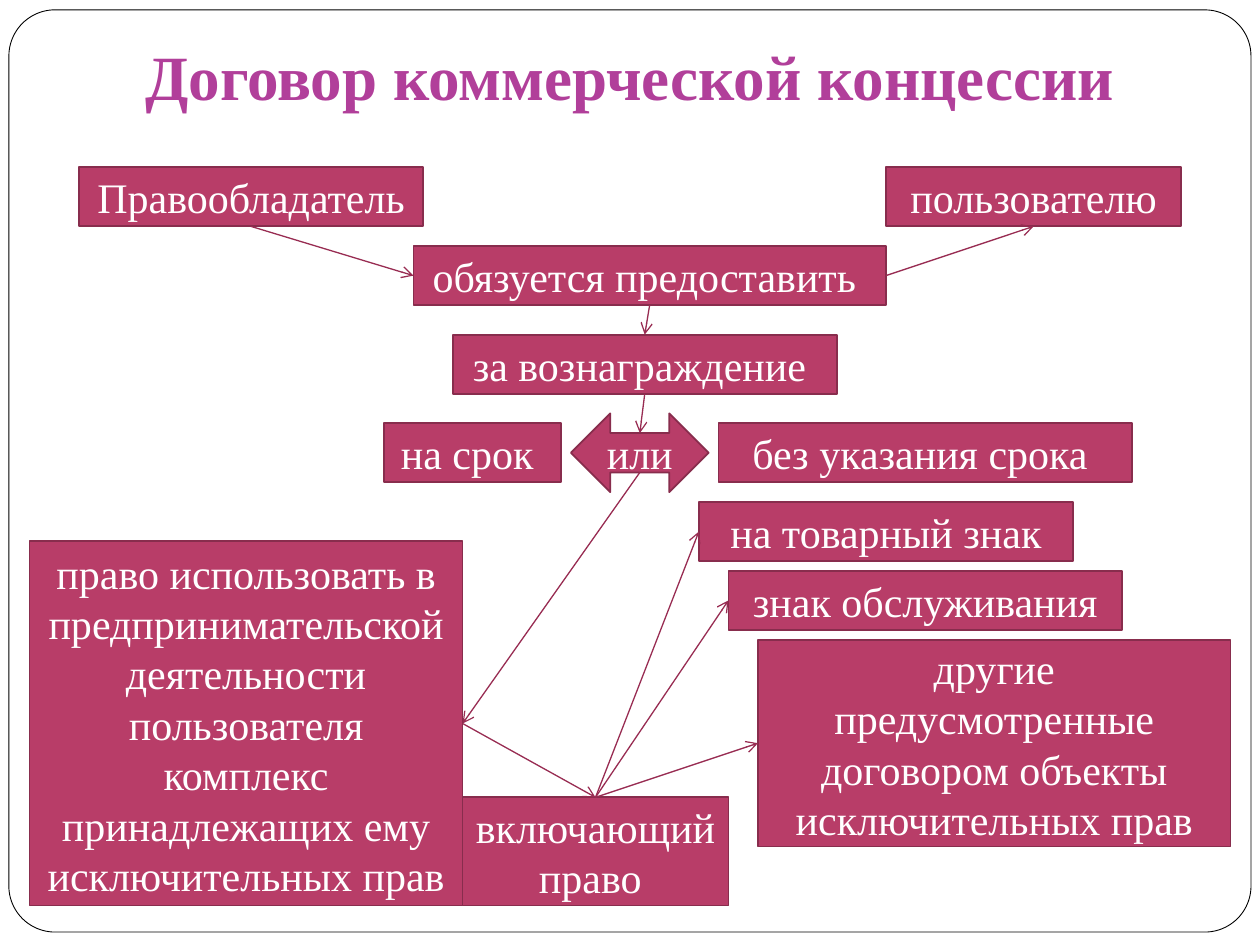
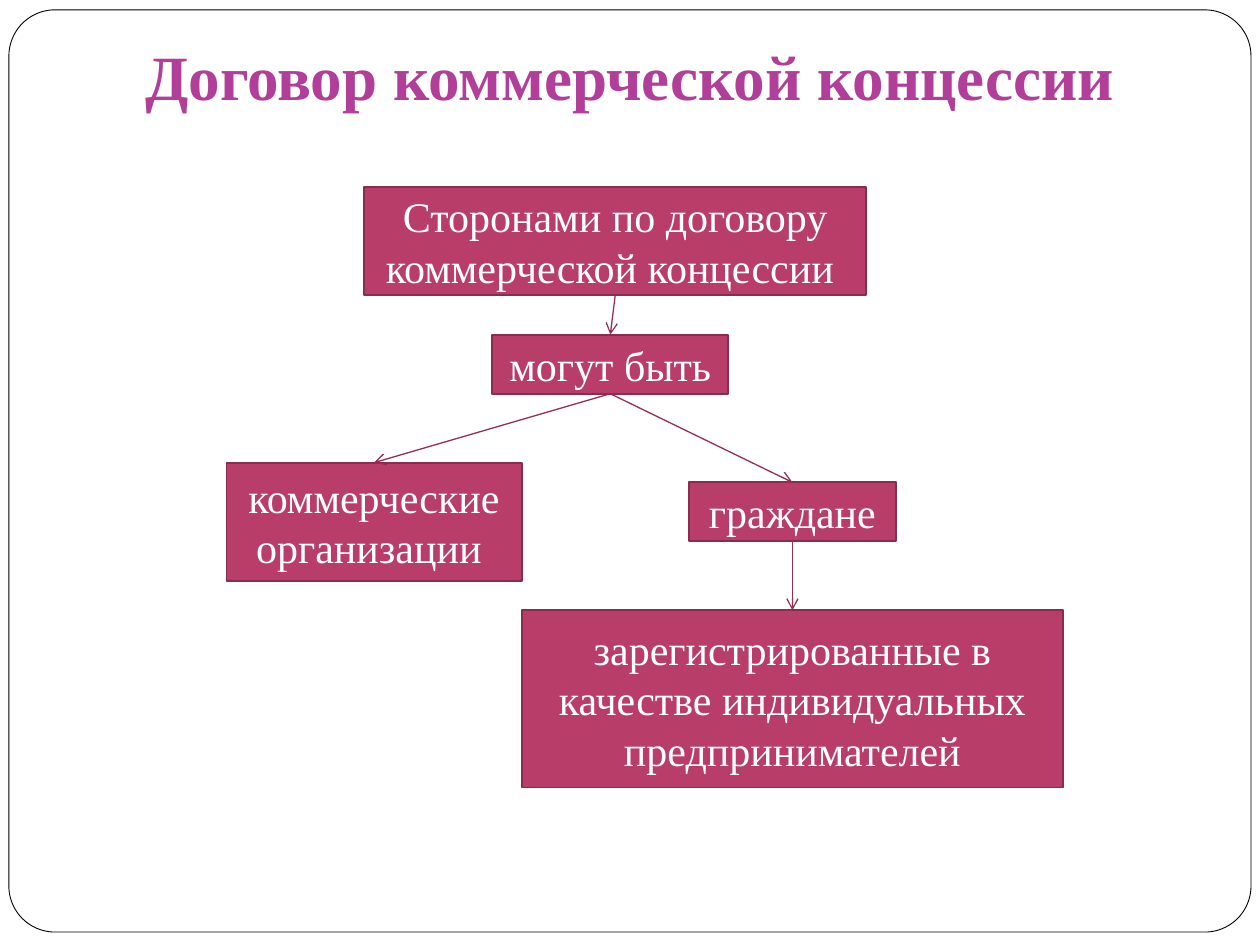
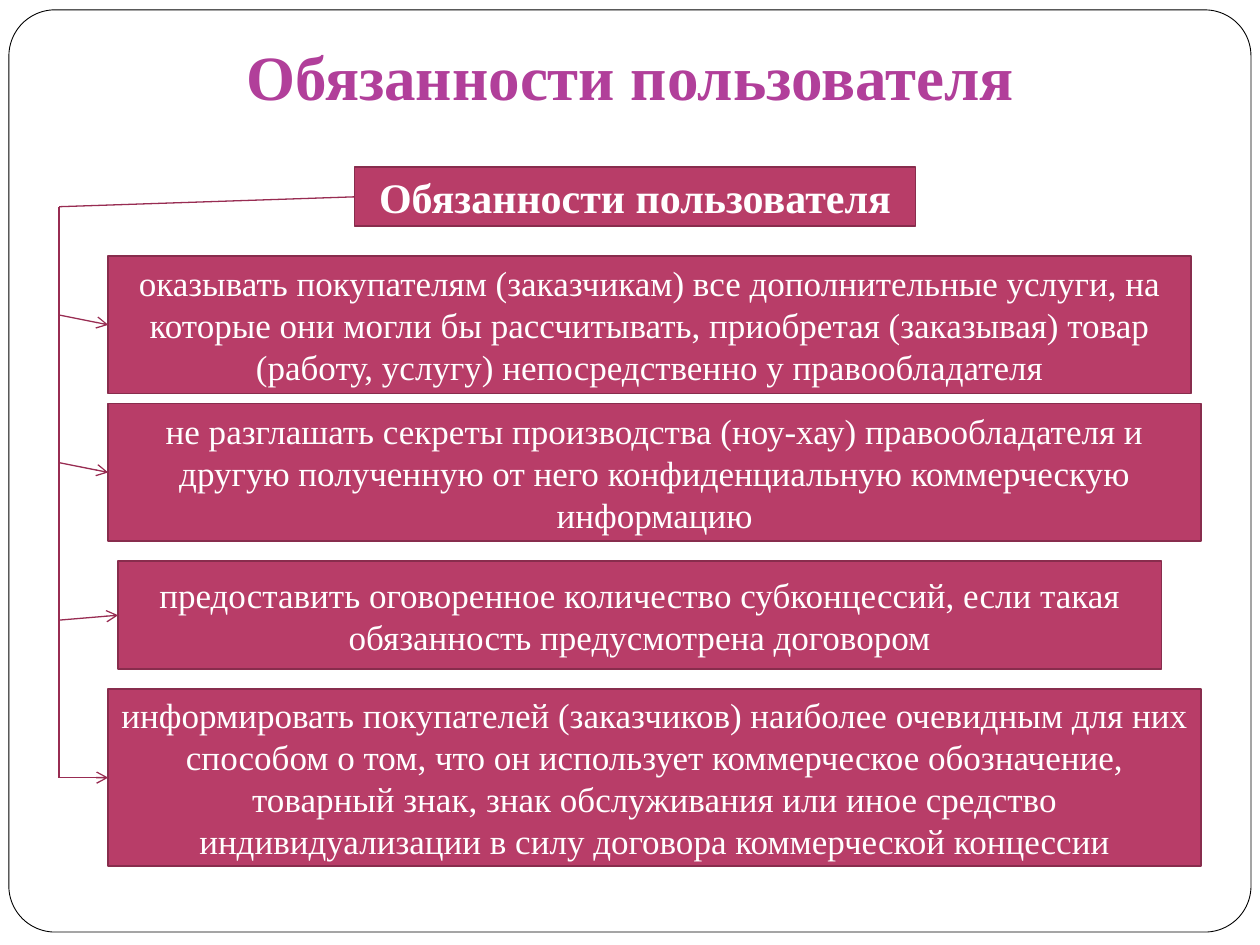
"""Build three slides on the commercial concession agreement."""
from lxml.etree import SubElement
from pptx import Presentation
from pptx.dml.color import RGBColor
from pptx.enum.shapes import MSO_CONNECTOR as Connector, MSO_SHAPE as Preset
from pptx.enum.text import MSO_ANCHOR as Anchor, MSO_AUTO_SIZE as AutoSize, PP_ALIGN as Align
from pptx.oxml.ns import qn
from pptx.util import Cm, Pt

COLORS = {
    "paper": "FFFFFF", "frame": "000000", "title": "B13F9A",
    "box": "B83D68", "border": "882D4D", "arrow": "982C52", "text": "FFFFFF",
}
FONT = "Times New Roman"
WIDTH, HEIGHT = 25.4, 19.05
COLUMNS = 128
TOP, LEFT, BOTTOM, RIGHT = range(4)
STYLES = {"label": (24, False), "heading": (24, True), "duty": (20, False)}
TRUNK = 6

SLIDES = [
    {
        "title": "Договор коммерческой концессии",
        "boxes": {
            "owner": ("Правообладатель", (8, 17, 35, 6), "label"),
            "user": ("пользователю", (90, 17, 30, 6), "label"),
            "provide": ("обязуется предоставить ", (42, 25, 48, 6), "label"),
            "fee": ("за вознаграждение ", (46, 34, 39, 6), "label"),
            "term": ("на срок ", (39, 43, 18, 6), "label"),
            "no term": ("без указания срока ", (73, 43, 42, 6), "label"),
            "right": ("право использовать в предпринимательской деятельности "
                      "пользователя комплекс принадлежащих ему исключительных прав",
                      (3, 55, 44, 37), "label"),
            "or": ("или", (58, 42, 14, 8), "label"),
            "including": ("включающий право ", (47, 81, 27, 11), "label"),
            "others": ("другие предусмотренные договором объекты исключительных прав",
                       (77, 65, 48, 21), "label"),
            "trademark": ("на товарный знак", (71, 51, 38, 6), "label"),
            "service mark": ("знак обслуживания", (74, 58, 40, 6), "label"),
        },
        "arrows": [
            (("owner", BOTTOM), ("provide", LEFT)),
            (("provide", RIGHT), ("user", BOTTOM)),
            (("provide", BOTTOM), ("fee", TOP)),
            (("fee", BOTTOM), (65, 44)),
            ((65, 48), ("right", RIGHT)),
            (("right", RIGHT), ("including", TOP)),
            (("including", TOP), ("trademark", LEFT)),
            (("including", TOP), ("service mark", LEFT)),
            (("including", TOP), ("others", LEFT)),
        ],
        "lines": [],
    },
    {
        "title": "Договор коммерческой концессии",
        "boxes": {
            "parties": ("Сторонами по договору коммерческой концессии ",
                        (37, 19, 51, 11), "label"),
            "may be": ("могут быть ", (50, 34, 24, 6), "label"),
            "companies": ("коммерческие организации ", (23, 47, 30, 12), "label"),
            "citizens": ("граждане", (70, 49, 21, 6), "label"),
            "registered": ("зарегистрированные в качестве индивидуальных предпринимателей",
                           (53, 62, 55, 18), "label"),
        },
        "arrows": [
            (("parties", BOTTOM), ("may be", TOP)),
            (("may be", BOTTOM), ("citizens", TOP)),
            (("may be", BOTTOM), ("companies", TOP)),
            (("citizens", BOTTOM), ("registered", TOP)),
        ],
        "lines": [],
    },
    {
        "title": "Обязанности пользователя",
        "boxes": {
            "duties": ("Обязанности пользователя", (36, 17, 57, 6), "heading"),
            "services": ("оказывать покупателям (заказчикам) все дополнительные услуги, "
                         "на которые они могли бы рассчитывать, приобретая (заказывая) "
                         "товар (работу, услугу) непосредственно у правообладателя",
                         (11, 26, 110, 14), "duty"),
            "secrets": ("не разглашать секреты производства (ноу-хау) правообладателя и "
                        "другую полученную от него конфиденциальную коммерческую информацию",
                        (11, 41, 111, 14), "duty"),
            "subconcessions": ("предоставить оговоренное количество субконцессий, если такая "
                               "обязанность предусмотрена договором",
                               (12, 57, 106, 11), "duty"),
            "informing": ("информировать покупателей (заказчиков) наиболее очевидным для них "
                          "способом о том, что он использует коммерческое обозначение, "
                          "товарный знак, знак обслуживания или иное средство "
                          "индивидуализации в силу договора коммерческой концессии",
                          (11, 70, 111, 18), "duty"),
        },
        "arrows": [
            ((TRUNK, 32), ("services", LEFT)),
            ((TRUNK, 47), ("secrets", LEFT)),
            ((TRUNK, 63), ("subconcessions", LEFT)),
            ((TRUNK, 79), ("informing", LEFT)),
        ],
        "lines": [
            (("duties", LEFT), (TRUNK, 21)),
            ((TRUNK, 21), (TRUNK, 79)),
        ],
    },
]
PRESETS = {"or": Preset.LEFT_RIGHT_ARROW}


def grid(cells):
    return Cm(cells * WIDTH / COLUMNS)


def color(name):
    return RGBColor.from_string(COLORS[name])


def paint(shape, fill, line, width):
    shape.shadow.inherit = False
    shape.fill.solid()
    shape.fill.fore_color.rgb = color(fill)
    shape.line.color.rgb = color(line)
    shape.line.width = Pt(width)


def write(shape, text, size, bold, color_name):
    frame = shape.text_frame
    frame.text = text
    frame.word_wrap = True
    frame.vertical_anchor = Anchor.MIDDLE
    paragraph = frame.paragraphs[0]
    paragraph.alignment = Align.CENTER
    font = paragraph.runs[0].font
    font.name, font.size, font.bold = FONT, Pt(size), bold
    font.color.rgb = color(color_name)


def add_frame(slide):
    frame = slide.shapes.add_shape(
        Preset.ROUNDED_RECTANGLE, Cm(0.18), Cm(0.2), Cm(25.04), Cm(18.59))
    frame.adjustments[0] = 0.05
    paint(frame, "paper", "frame", 0.5)
    slide.slide_layout.shapes.element.insert(2, frame.element)


def add_title(slide, text):
    title = slide.shapes.title
    title.left, title.top, title.width, title.height = 0, 0, Cm(WIDTH), grid(16)
    write(title, text, 36, True, "title")
    title.text_frame.auto_size = AutoSize.NONE
    title.text_frame.margin_bottom = Cm(0.25)


def add_box(slide, name, text, place, style):
    preset = PRESETS.get(name, Preset.RECTANGLE)
    box = slide.shapes.add_shape(preset, *map(grid, place))
    paint(box, "box", "border", 1)
    write(box, text, *STYLES[style], "text")
    return box


def add_line(slide, boxes, start, end, arrow):
    connector = slide.shapes.add_connector(Connector.STRAIGHT, 0, 0, 0, 0)
    if start[0] in boxes:
        connector.begin_connect(boxes[start[0]], start[1])
    else:
        connector.begin_x, connector.begin_y = map(grid, start)
    if end[0] in boxes:
        connector.end_connect(boxes[end[0]], end[1])
    else:
        connector.end_x, connector.end_y = map(grid, end)
    connector.line.color.rgb = color("arrow")
    connector.line.width = Pt(0.75)
    properties = connector.element.spPr
    if arrow:
        SubElement(properties.find(qn("a:ln")), qn("a:tailEnd"), type="arrow")
    SubElement(properties, qn("a:effectLst"))


def main():
    presentation = Presentation()
    presentation.slide_width, presentation.slide_height = Cm(WIDTH), Cm(HEIGHT)
    layout = presentation.slide_layouts[5]
    for number, content in enumerate(SLIDES):
        slide = presentation.slides.add_slide(layout)
        if number == 0:
            add_frame(slide)
        add_title(slide, content["title"])
        boxes = {name: add_box(slide, name, *box) for name, box in content["boxes"].items()}
        for kind in ("lines", "arrows"):
            for start, end in content[kind]:
                add_line(slide, boxes, start, end, kind == "arrows")
    presentation.save("out.pptx")


if __name__ == "__main__":
    main()
